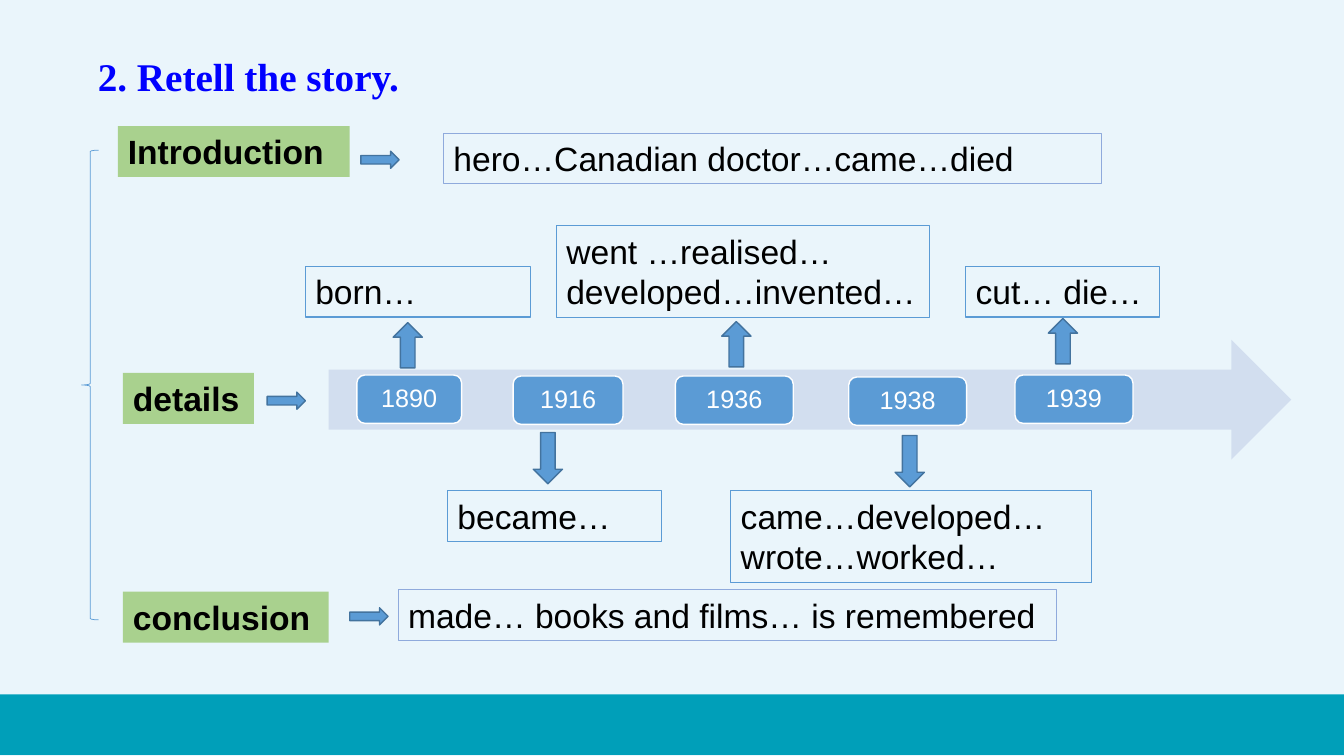
import pptx
import pptx.util
import pptx.dml.color
import pptx.enum.shapes
import pptx.enum.text

CELL = pptx.util.Inches(0.1)
COLUMNS, ROWS = 133.33, 75
SHAPES = pptx.enum.shapes.MSO_SHAPE
ALIGN = pptx.enum.text.PP_ALIGN
ANCHOR = pptx.enum.text.MSO_ANCHOR
BLUE, DARK_BLUE, PALE_BLUE = "5B9BD5", "43739E", "8FAADC"
GREEN, BLACK, WHITE = "A9D18E", "000000", "FFFFFF"
LINE_ROWS, BOX_PADDING = 4.05, 1

SECTIONS = [
    ("Introduction", 11.7, 12.5, 23, 35.8, 15),
    ("details", 12.2, 37, 13, 26.5, 38.9),
    ("conclusion", 12.2, 58.7, 20.4, 34.7, 60.3),
]
SUMMARIES = [
    ("hero…Canadian doctor…came…died", 44, 13.2),
    ("made… books and films… is remembered", 39.5, 58.5),
]
MILESTONES = [
    ("1890", 35.4, 37.2, 10.4),
    ("1916", 50.9, 37.3, 10.9),
    ("1936", 67, 37.3, 11.7),
    ("1938", 84.2, 37.4, 11.7),
    ("1939", 100.7, 37.2, 11.7),
]
EVENTS = [
    ("born…", 30.3, 26.4, 22.3, 1),
    ("became…", 44.4, 48.7, 21.2, 1),
    ("went …realised…\ndeveloped…invented…", 55.2, 22.4, 37, 2),
    ("came…developed… wrote…worked…", 72.5, 48.7, 35.8, 2),
    ("cut… die…", 95.8, 26.4, 19.2, 1),
]
UP_ARROWS = [(39, 32), (71.6, 31.9), (104, 31.6)]
DOWN_ARROWS = [(52.9, 42.9), (88.8, 43.2)]


def color(value):
    """Turn a hex string into a colour."""
    return pptx.dml.color.RGBColor.from_string(value)


def grid(*cells):
    """Turn grid cells into lengths."""
    return [round(cell * CELL) for cell in cells]


def add_shape(slide, kind, left, top, width, height, fill=None, line=None, weight=1):
    """Add a flat preset shape on the grid."""
    shape = slide.shapes.add_shape(kind, *grid(left, top, width, height))
    shape.shadow.inherit = False
    if fill:
        shape.fill.solid()
        shape.fill.fore_color.rgb = color(fill)
    else:
        shape.fill.background()
    if line:
        shape.line.color.rgb = color(line)
        shape.line.width = pptx.util.Pt(weight)
    else:
        shape.line.fill.background()
    return shape


def set_text(shape, text, size, text_color, font="Arial", bold=False,
             align=ALIGN.LEFT, anchor=ANCHOR.TOP, spacing=1.0):
    """Write text into a shape and format every run."""
    frame = shape.text_frame
    frame.word_wrap = True
    frame.auto_size = pptx.enum.text.MSO_AUTO_SIZE.NONE
    frame.vertical_anchor = anchor
    frame.text = text
    for paragraph in frame.paragraphs:
        paragraph.alignment = align
        paragraph.line_spacing = spacing
        for run in paragraph.runs:
            run.font.name = font
            run.font.size = pptx.util.Pt(size)
            run.font.bold = bold
            run.font.color.rgb = color(text_color)


def add_title(slide, text):
    """Move the title placeholder and fill it."""
    title = slide.shapes.title
    title.left, title.top, title.width, title.height = grid(8.7, 3.8, 35.8, 6.7)
    set_text(title, text, 28, "0000FF", "Times New Roman", True, spacing=1.2)


def add_box(slide, text, left, top, width, lines=1, fill=None, line=None, bold=False):
    """Add a text box whose height follows its number of lines."""
    height = lines * LINE_ROWS + BOX_PADDING
    box = add_shape(slide, SHAPES.RECTANGLE, left, top, width, height, fill, line, 0.75)
    set_text(box, text, 24, BLACK, bold=bold)


def add_arrow(slide, kind, left, top, width, height):
    """Add a small block arrow."""
    add_shape(slide, kind, left, top, width, height, BLUE, DARK_BLUE)


def add_milestone(slide, year, left, top, width):
    """Add a rounded year marker on the timeline."""
    marker = add_shape(slide, SHAPES.ROUNDED_RECTANGLE, left, top, width, 4.8, BLUE, WHITE)
    set_text(marker, year, 18, WHITE, align=ALIGN.CENTER, anchor=ANCHOR.MIDDLE, spacing=0.9)


def main():
    """Build the slide and save it."""
    presentation = pptx.Presentation()
    presentation.slide_width, presentation.slide_height = grid(COLUMNS, ROWS)
    slide = presentation.slides.add_slide(presentation.slide_layouts[5])
    slide.background.fill.solid()
    slide.background.fill.fore_color.rgb = color("EAF5FB")
    add_shape(slide, SHAPES.RECTANGLE, 0, 68.9, COLUMNS, 6, "009FB9")
    add_title(slide, "2. Retell the story.")

    add_shape(slide, SHAPES.RIGHT_ARROW, 32.6, 33.7, 95.5, 11.9, "D2DEEF")
    for milestone in MILESTONES:
        add_milestone(slide, *milestone)
    for event in EVENTS:
        add_box(slide, *event, line=BLUE)
    for left, top in UP_ARROWS:
        add_arrow(slide, SHAPES.UP_ARROW, left, top, 2.9, 4.5)
    for left, top in DOWN_ARROWS:
        add_arrow(slide, SHAPES.DOWN_ARROW, left, top, 2.9, 5.1)

    for text, left, top, width, arrow_left, arrow_top in SECTIONS:
        add_box(slide, text, left, top, width, fill=GREEN, bold=True)
        add_arrow(slide, SHAPES.RIGHT_ARROW, arrow_left, arrow_top, 3.8, 1.7)
    for text, left, top in SUMMARIES:
        add_box(slide, text, left, top, 65.3, line=PALE_BLUE)
    add_shape(slide, SHAPES.LEFT_BRACE, 8.1, 14.9, 1.7, 46.6, line=BLUE, weight=0.5)
    presentation.save("out.pptx")


if __name__ == "__main__":
    main()
